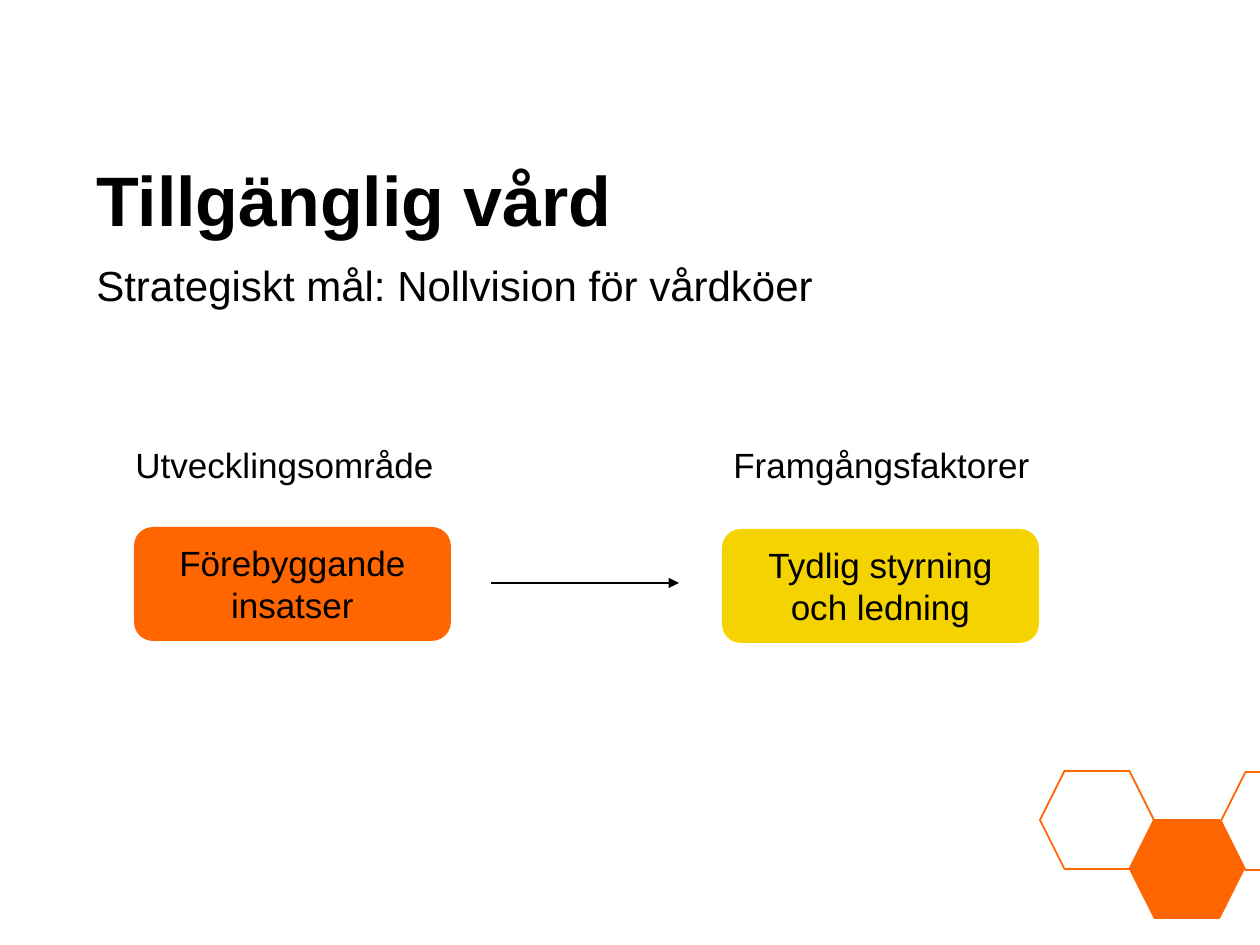
from lxml import etree
from pptx import Presentation
from pptx import util as u
from pptx.dml.color import RGBColor
from pptx.enum import shapes, text
from pptx.oxml.ns import qn

ORANGE, YELLOW, WHITE, BLACK = "FF6500", "F5D300", "FFFFFF", "000000"

# Content: words, place in px (left, top, width, height), format
TEXTS = [
    ("Tillgänglig vård", (84, 145, 1134, 107),
     dict(size=40, bold=True, anchor=text.MSO_ANCHOR.MIDDLE)),
    ("Strategiskt mål: Nollvision för vårdköer", (84, 253, 1134, 115), dict(size=24)),
    ("Utvecklingsområde", (123, 437, 357, 55), {}),
    ("Framgångsfaktorer", (721, 437, 336, 55), {}),
]
BOXES = [
    ("Förebyggande insatser", (134, 527, 317, 114), ORANGE),
    ("Tydlig styrning och ledning", (722, 529, 317, 114), YELLOW),
]
HEXAGONS = [(1040, 771, WHITE), (1130, 820, ORANGE), (1221, 772, WHITE)]
HEX_SIZE = (114, 98)
ARROW = (491, 583, 679, 583)


def px(*lengths):
    return [round(n * 914400 / 126) for n in lengths]


def color(value):
    return RGBColor.from_string(value)


def write(sp, words, size=20, bold=False, align=text.PP_ALIGN.LEFT,
          anchor=text.MSO_ANCHOR.TOP):
    tf = sp.text_frame
    tf.word_wrap = True
    tf.vertical_anchor = anchor
    p = tf.paragraphs[0]
    p.alignment = align
    r = p.add_run()
    r.text = words
    r.font.name, r.font.size, r.font.bold = "Arial", u.Pt(size), bold
    r.font.color.rgb = color(BLACK)


def add_shape(s, kind, place, fill, line=None):
    sp = s.shapes.add_shape(kind, *px(*place))
    sp.shadow.inherit = False
    sp.fill.solid()
    sp.fill.fore_color.rgb = color(fill)
    if line:
        sp.line.color.rgb = color(line)
        sp.line.width = u.Pt(1)
    else:
        sp.line.fill.background()
    return sp


def add_arrow(s, ends):
    c = s.shapes.add_connector(shapes.MSO_CONNECTOR.STRAIGHT, *px(*ends))
    c.line.color.rgb = color(BLACK)
    c.line.width = u.Pt(0.75)
    etree.SubElement(c.line._get_or_add_ln(), qn("a:tailEnd"), type="triangle")
    etree.SubElement(c._element.spPr, qn("a:effectLst"))


def main():
    prs = Presentation()
    prs.slide_width, prs.slide_height = px(1260, 945)
    s = prs.slides.add_slide(prs.slide_layouts[6])

    # Honeycomb in the corner
    for x, y, fill in HEXAGONS:
        add_shape(s, shapes.MSO_SHAPE.HEXAGON, (x, y, *HEX_SIZE), fill, ORANGE)

    # Title, goal and column labels
    for words, place, style in TEXTS:
        write(s.shapes.add_textbox(*px(*place)), words, **style)

    # Area and success factor, with the arrow between them
    for words, place, fill in BOXES:
        sp = add_shape(s, shapes.MSO_SHAPE.ROUNDED_RECTANGLE, place, fill)
        write(sp, words, align=text.PP_ALIGN.CENTER, anchor=text.MSO_ANCHOR.MIDDLE)
    add_arrow(s, ARROW)

    prs.save("out.pptx")


if __name__ == "__main__":
    main()
